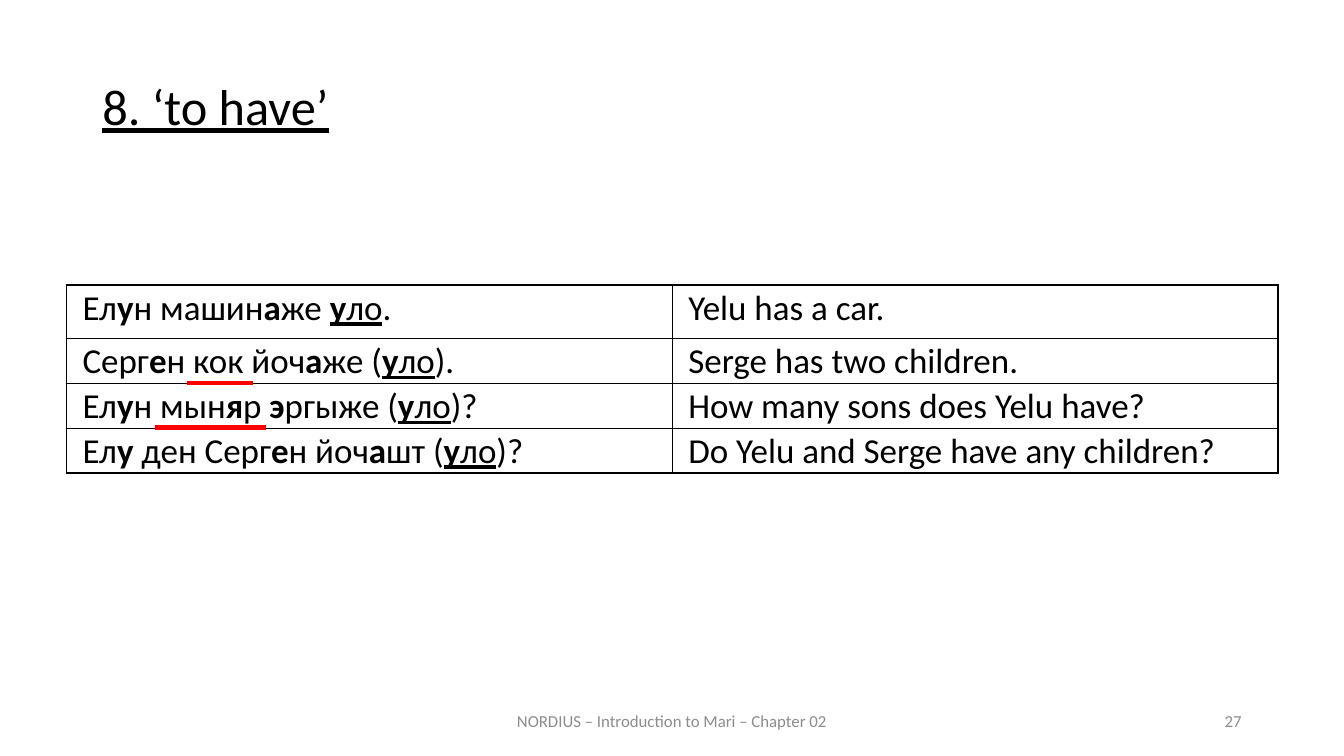
"""Builds the slide on 'to have' in Mari: example sentences with translations."""
from itertools import product

from lxml.etree import SubElement
from pptx import Presentation
from pptx.dml.color import RGBColor
from pptx.enum.shapes import MSO_CONNECTOR
from pptx.enum.text import MSO_ANCHOR, PP_ALIGN
from pptx.oxml.ns import qn
from pptx.util import Pt

COLOURS = {"ink": "000000", "muted": "8C8C8C", "accent": "FF0000"}
HEADING = "8. ‘to have’"
FOOTER = "NORDIUS – Introduction to Mari – Chapter 02"
PAGE_NUMBER = "27"
# SENTENCES
SENTENCES = [
    ("Ел*у*н машин*а*же _*у*ло_.", "Yelu has a car."),
    ("Серг*е*н кок йоч*а*же (_*у*ло_).", "Serge has two children."),
    ("Ел*у*н мын*я*р *э*ргыже (_*у*ло_)?", "How many sons does Yelu have?"),
    ("Ел*у *ден Серг*е*н йоч*а*шт (_*у*ло_)?", "Do Yelu and Serge have any children?"),
]
UNDERLINES = [(133.9, 180.7, 273.6), (110.9, 190.1, 305.3)]
TABLE_LEFT, TABLE_TOP, COLUMN_WIDTH = 47.5, 203.8, 432.7
ROW_HEIGHTS = [38.2, 32, 32, 32]
OUTER, INNER = 1.5, 1


def apply(target, values):
    for name, value in values.items():
        setattr(target, name, value)


def write(paragraph, marked, size, colour, underline=False):
    bold = False
    for part in marked.replace("*", "\n*\n").replace("_", "\n_\n").split("\n"):
        if part == "*":
            bold = not bold
        elif part == "_":
            underline = not underline
        elif part:
            run = paragraph.add_run()
            run.text = part
            apply(run.font, {"name": "Calibri", "size": Pt(size), "bold": bold, "underline": underline})
            run.font.color.rgb = RGBColor.from_string(COLOURS[colour])


def add_text(slide, box, marked, size, colour, anchor, layout, underline=False):
    frame = slide.shapes.add_textbox(*map(Pt, box)).text_frame
    apply(frame, {"word_wrap": True, "vertical_anchor": anchor})
    apply(frame.paragraphs[0], layout)
    write(frame.paragraphs[0], marked, size, colour, underline)


def add_border(cell, side, width):
    edge = SubElement(cell._tc.get_or_add_tcPr(), qn(f"a:ln{side}"), w=str(Pt(width)))
    fill = SubElement(edge, qn("a:solidFill"))
    SubElement(fill, qn("a:srgbClr"), val=COLOURS["ink"])


def add_sentences(slide):
    rows, columns = len(SENTENCES), len(SENTENCES[0])
    box = (TABLE_LEFT, TABLE_TOP, columns * COLUMN_WIDTH, sum(ROW_HEIGHTS))
    table = slide.shapes.add_table(rows, columns, *map(Pt, box)).table
    apply(table, {"first_row": False, "horz_banding": False})
    for column in table.columns:
        column.width = Pt(COLUMN_WIDTH)
    for row, height in zip(table.rows, ROW_HEIGHTS):
        row.height = Pt(height)
    for r, c in product(range(rows), range(columns)):
        cell = table.cell(r, c)
        apply(cell, {"margin_left": Pt(11.5), "margin_right": Pt(11.5),
                     "margin_top": Pt(1.4), "margin_bottom": Pt(0)})
        on_edge = {"L": c == 0, "R": c == columns - 1, "T": r == 0, "B": r == rows - 1}
        for side, outer in on_edge.items():
            add_border(cell, side, OUTER if outer else INNER)
        cell.fill.background()
        paragraph = cell.text_frame.paragraphs[0]
        paragraph.alignment = PP_ALIGN.JUSTIFY
        write(paragraph, SENTENCES[r][c], 25, "ink")


def add_underline(slide, start, end, height):
    line = slide.shapes.add_connector(MSO_CONNECTOR.STRAIGHT, *map(Pt, (start, height, end, height)))
    line.line.width = Pt(3)
    line.line.color.rgb = RGBColor.from_string(COLOURS["accent"])
    SubElement(line._element.spPr, qn("a:effectLst"))


def main():
    deck = Presentation()
    apply(deck, {"slide_width": Pt(960), "slide_height": Pt(540)})
    slide = deck.slides.add_slide(deck.slide_layouts[6])
    add_text(slide, (66, 54.7, 828, 430.6), HEADING, 36, "ink", MSO_ANCHOR.TOP,
             {"alignment": PP_ALIGN.JUSTIFY, "line_spacing": 0.9, "space_before": Pt(12)}, True)
    add_text(slide, (318, 500.5, 324, 28.8), FOOTER, 12, "muted", MSO_ANCHOR.MIDDLE,
             {"alignment": PP_ALIGN.CENTER})
    add_text(slide, (678, 500.5, 216, 28.8), PAGE_NUMBER, 12, "muted", MSO_ANCHOR.MIDDLE,
             {"alignment": PP_ALIGN.RIGHT})
    add_sentences(slide)
    for underline in UNDERLINES:
        add_underline(slide, *underline)
    deck.save("out.pptx")


if __name__ == "__main__":
    main()
